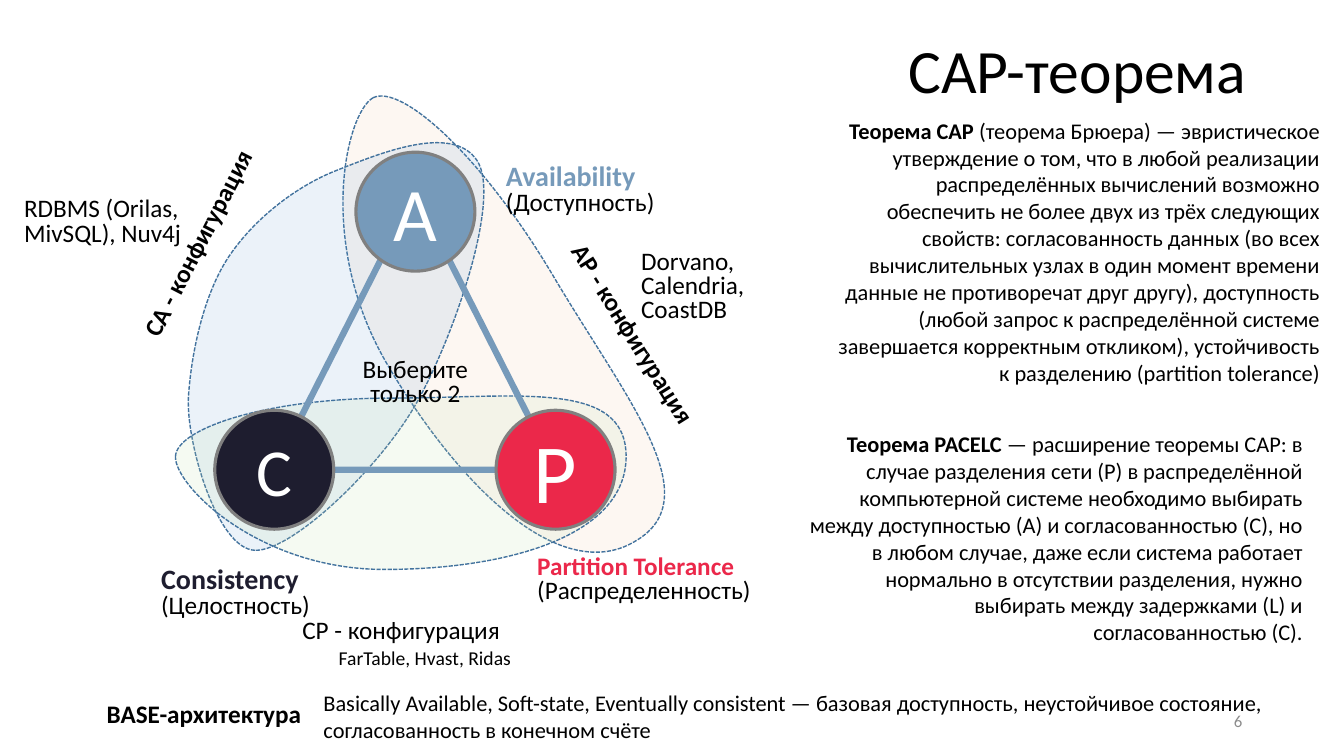
from math import cos, radians, sin

from lxml import etree
from pptx import Presentation
from pptx.dml.color import RGBColor
from pptx.enum.dml import MSO_LINE
from pptx.enum.shapes import MSO_SHAPE
from pptx.enum.text import MSO_ANCHOR, MSO_AUTO_SIZE, PP_ALIGN
from pptx.oxml.ns import qn
from pptx.util import Inches, Pt

DASH = MSO_LINE.SQUARE_DOT
OVAL, DELTA = MSO_SHAPE.OVAL, MSO_SHAPE.ISOSCELES_TRIANGLE
TOP, MID = MSO_ANCHOR.TOP, MSO_ANCHOR.MIDDLE
GROW, FIXED = MSO_AUTO_SIZE.SHAPE_TO_FIT_TEXT, MSO_AUTO_SIZE.NONE
LEFT, MIDST, RIGHT = PP_ALIGN.LEFT, PP_ALIGN.CENTER, PP_ALIGN.RIGHT

FONT = "Calibri"
TIGHT = 0.8
HUES = {
    "text": "000000", "white": "FFFFFF", "page": "8C8C8C",
    "steel": "769ABA", "navy": "1E1D2F", "red": "EB284A",
    "ring": "808080", "dash": "43739E",
    "peach": "F4B183", "sky": "5B9BD5", "leaf": "C5E0B4",
}

ZONES = [
    ("peach", 10, 59.4, (2.21, 1.87, 5.11, 1.89), [
        (3.7, 0.47),
        (3.98, 0.33), (4.78, 1.04), (5.5, 2.26),
        (6.22, 3.47), (7.04, 4.44), (6.3, 4.87),
        (5.57, 5.31), (4.57, 4.35), (3.85, 3.13),
        (3.13, 1.92), (3.43, 0.62), (3.7, 0.47)]),
    ("sky", 12, 306.3, (0.99, 1.56, 4.49, 2.38), [
        (2.53, 4.96),
        (2.15, 4.95), (1.84, 3.87), (1.87, 3.43),
        (1.9, 2.99), (2.02, 2.43), (2.26, 2.06),
        (2.51, 1.68), (2.93, 1.35), (3.34, 1.19),
        (3.75, 1.03), (4.48, 0.72), (4.73, 1.09),
        (4.98, 1.46), (4.5, 2.85), (4.13, 3.5),
        (3.77, 4.14), (2.9, 4.97), (2.53, 4.96)]),
    ("leaf", 16, 0, (1.74, 3.43, 4.48, 1.73), [
        (1.74, 4.03),
        (1.75, 3.75), (2.65, 3.45), (3.88, 3.45),
        (5.12, 3.45), (6.21, 3.26), (6.21, 4.03),
        (6.21, 4.81), (5.05, 5.15), (3.81, 5.15),
        (2.57, 5.15), (1.73, 4.32), (1.74, 4.03)]),
]
NODES = [("A", 54, "steel", 3.53, 1.01), ("C", 48, "navy", 2.13, 3.57),
         ("P", 60, "red", 4.92, 3.57)]
TERMS = [
    ("Availability", "(Доступность)", 20, "steel", (4.92, 1.09, 1.71, 0.62)),
    ("Partition Tolerance", "(Распределенность)", 18, "red", (5.23, 4.97, 2.35, 0.59)),
    ("Consistency", "(Целостность)", 20, "navy", (1.5, 5.09, 2.14, 0.62)),
]
NOTES = [
    ("Выберите только 2", 18, False, MIDST, 0, (3.48, 3.01, 1.28, 0.59)),
    ("CA - конфигурация", 18, True, LEFT, 297.2, (0.81, 1.66, 2.44, 0.35)),
    ("CP - конфигурация", 18, False, LEFT, 0, (2.9, 5.6, 2.44, 0.35)),
    ("AP - конфигурация", 18, True, LEFT, 57.9, (5.09, 2.74, 2.44, 0.35)),
    ("RDBMS (Orilas, MivSQL), Nuv4j", 18, False, LEFT, 0, (0.14, 1.42, 1.87, 0.59)),
    ("FarTable, Hvast, Ridas", 14, False, MIDST, 0, (2.93, 5.9, 2.57, 0.29)),
    ("Dorvano, Calendria, CoastDB", 18, False, LEFT, 0, (6.26, 1.94, 1.87, 0.83)),
]
CAP = (
    "(теорема Брюера) — эвристическое утверждение о том, что в любой реализации "
    "распределённых вычислений возможно обеспечить не более двух из трёх следующих "
    "свойств: согласованность данных (во всех вычислительных узлах в один момент "
    "времени данные не противоречат друг другу), доступность (любой запрос к "
    "распределённой системе завершается корректным откликом), устойчивость к "
    "разделению (partition tolerance)")
PACELC = (
    "— расширение теоремы CAP: в случае разделения сети (P) в распределённой "
    "компьютерной системе необходимо выбирать между доступностью (A) и "
    "согласованностью (C), но в любом случае, даже если система работает нормально "
    "в отсутствии разделения, нужно выбирать между задержками (L) и "
    "согласованностью (C).")
BASE = (
    "Basically Available, Soft-state, Eventually consistent — базовая доступность, "
    "неустойчивое состояние, согласованность в конечном счёте")


def tint(name):
    return RGBColor.from_string(HUES[name])


def fit(box, part):
    return part[0] + box[0], part[1] + box[1], part[2], part[3]


def write(frame, lines, align=LEFT, space=None, anchor=TOP):
    frame.vertical_anchor = anchor
    for i, line in enumerate(lines):
        para = frame.paragraphs[0] if i == 0 else frame.add_paragraph()
        para.alignment = align
        para.line_spacing = space
        for text, size, hue, bold in line:
            run = para.add_run()
            run.text = text
            run.font.name = FONT
            run.font.size = Pt(size)
            run.font.bold = bold
            run.font.color.rgb = tint(hue)


def label(slide, box, lines, align=LEFT, space=None, anchor=TOP, turn=0, wrap=True):
    shape = slide.shapes.add_textbox(*map(Inches, box))
    shape.rotation = turn
    shape.text_frame.word_wrap = wrap
    shape.text_frame.auto_size = GROW if anchor == TOP else FIXED
    write(shape.text_frame, lines, align, space, anchor)


def style(shape, fill, line, width):
    shape.shadow.inherit = False
    if fill:
        shape.fill.solid()
        shape.fill.fore_color.rgb = tint(fill)
    else:
        shape.fill.background()
    shape.line.color.rgb = tint(line)
    shape.line.width = Pt(width)


def bend(shape, dots):
    track = next(shape._element.iter(qn("a:path")))
    for child in list(track):
        track.remove(child)
    steps = [("a:moveTo", dots[:1])]
    steps += [("a:cubicBezTo", dots[i:i + 3]) for i in range(1, len(dots), 3)]
    for tag, group in steps:
        step = etree.SubElement(track, qn(tag))
        for x, y in group:
            dot = etree.SubElement(step, qn("a:pt"))
            dot.set("x", str(Inches(x)))
            dot.set("y", str(Inches(y)))
    etree.SubElement(track, qn("a:close"))


def zone(slide, box, hue, alpha, turn, part, dots):
    x, y, wide, high = map(Inches, fit(box, part))
    pen = slide.shapes.build_freeform(x, y)
    pen.add_line_segments([(x + wide, y), (x + wide, y + high), (x, y + high)])
    shape = pen.convert_to_shape()
    midx, midy = part[2] / 2, part[3] / 2
    c, s = cos(radians(turn)), sin(radians(turn))
    gaps = [(px - part[0] - midx, py - part[1] - midy) for px, py in dots]
    bend(shape, [(midx + dx * c + dy * s, midy + dy * c - dx * s) for dx, dy in gaps])
    shape.rotation = turn
    style(shape, hue, "dash", 1)
    shape.line.dash_style = DASH
    color = next(shape._element.iter(qn("a:srgbClr")))
    etree.SubElement(color, qn("a:alpha")).set("val", str(alpha * 1000))


def scheme(slide, box):
    for item in ZONES:
        zone(slide, box, *item)
    area = fit(box, (2.72, 1.41, 2.79, 2.75))
    style(slide.shapes.add_shape(DELTA, *map(Inches, area)), None, "steel", 4.5)
    for sign, size, hue, x, y in NODES:
        area = fit(box, (x, y, 1.18, 1.18))
        node = slide.shapes.add_shape(OVAL, *map(Inches, area))
        style(node, hue, "ring", 2.25)
        write(node.text_frame, [[(sign, size, "white", False)]], MIDST, anchor=MID)
    for name, gloss, size, hue, part in TERMS:
        lines = [[(name, size, hue, True)], [(gloss, 18, "text", False)]]
        label(slide, fit(box, part), lines, space=TIGHT)
    for text, size, bold, align, turn, part in NOTES:
        lines = [[(text, size, "text", bold)]]
        label(slide, fit(box, part), lines, align, TIGHT, turn=turn)


def theory(slide, box):
    for head, body, part in [
        ("Теорема CAP ", CAP, (0.2, 0, 5.06, 2.79)),
        ("Теорема PACELC ", PACELC, (0, 3.11, 5.09, 2.26)),
    ]:
        line = [(head, 16, "text", True), (body, 16, "text", False)]
        label(slide, fit(box, part), [line], RIGHT)


def header(slide, box):
    label(slide, box, [[("CAP-теорема", 44, "text", False)]], RIGHT, 0.9, MID)


def footer(slide, box):
    label(slide, fit(box, (8.46, 0.16, 3, 0.4)), [[("6", 12, "page", False)]],
          RIGHT, anchor=MID)
    label(slide, fit(box, (0, 0.09, 2.15, 0.4)),
          [[("BASE-архитектура", 18, "text", True)]], wrap=False)
    label(slide, fit(box, (2.15, 0, 9.93, 0.64)), [[(BASE, 16, "text", False)]])


def main():
    deck = Presentation()
    deck.slide_width, deck.slide_height = Inches(13.33), Inches(7.5)
    slide = deck.slides.add_slide(deck.slide_layouts[6])
    header(slide, (0.96, 0.09, 11.5, 1.28))
    scheme(slide, (0, 0.5, 8.13, 6.2))
    theory(slide, (7.93, 1.11, 5.26, 5.37))
    footer(slide, (0.96, 6.79, 12.08, 0.64))
    deck.save("out.pptx")


if __name__ == "__main__":
    main()
